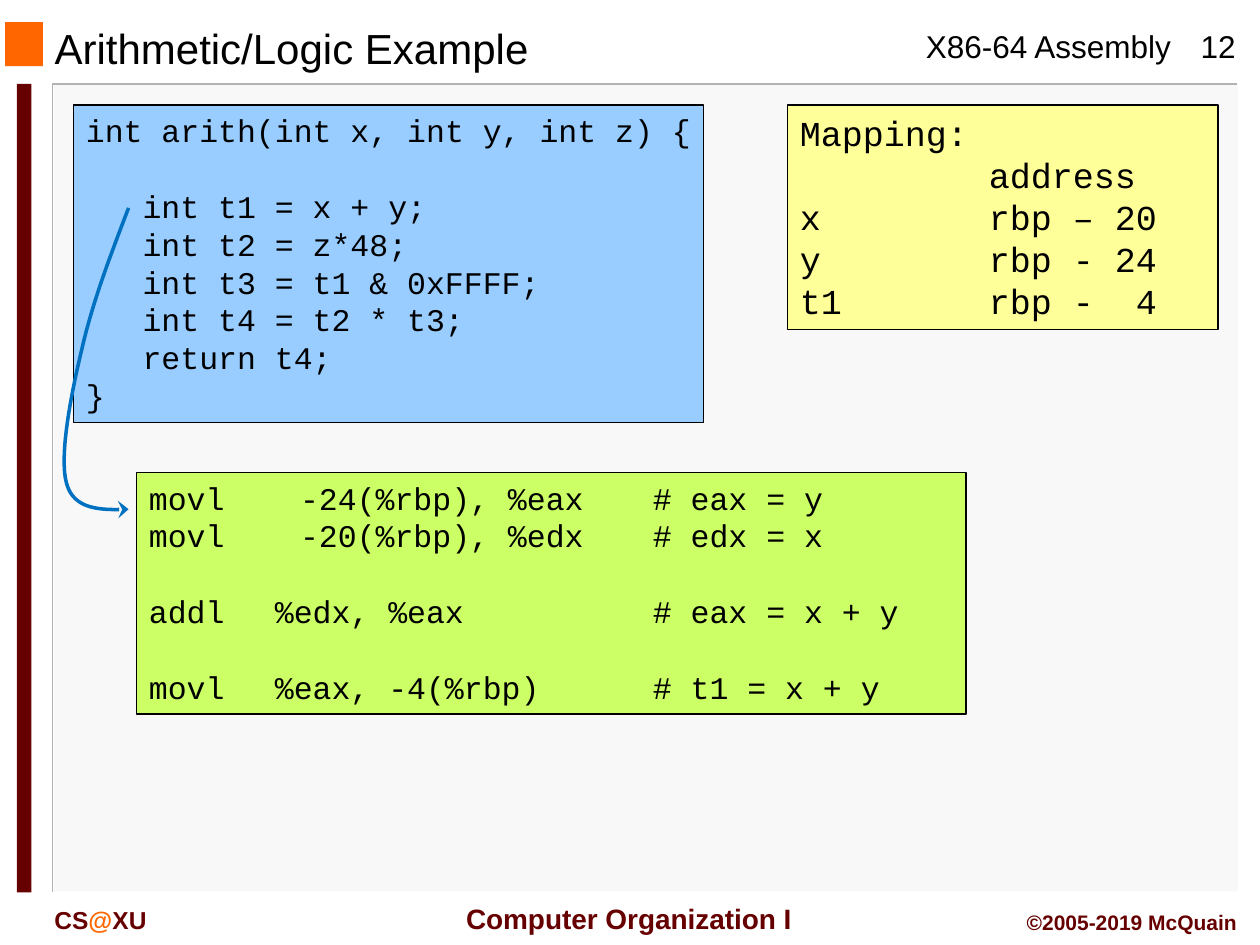
from pptx import Presentation, util as u
from pptx.dml.color import RGBColor
from pptx.enum import shapes, text
from lxml import etree

deck = Presentation()
deck.slide_width, deck.slide_height = u.Inches(10), u.Inches(7.5)
cell = deck.slide_width / 120  # grid of 120 columns by 90 rows
slide = deck.slides.add_slide(deck.slide_layouts[5])
parts = slide.shapes
NS = "{http://schemas.openxmlformats.org/drawingml/2006/main}"
RECT = shapes.MSO_SHAPE.RECTANGLE
LEFT, MID, RIGHT = text.PP_ALIGN.LEFT, text.PP_ALIGN.CENTER, text.PP_ALIGN.RIGHT
TOP, CENTRE = text.MSO_ANCHOR.TOP, text.MSO_ANCHOR.MIDDLE
MAROON, ORANGE = "660000", "FF6600"
rgb = RGBColor.from_string


def grid(*nums):
    return [round(n * cell) for n in nums]


def write(frame, lines, size=18, font="Arial", color="000000", bold=False,
          align=LEFT, anchor=TOP, wrap=True):
    """Each line is (runs, indent in columns, tab columns, space before in points)."""
    frame.word_wrap, frame.vertical_anchor = wrap, anchor
    frame.margin_left = frame.margin_right = u.Inches(0.1)
    frame.margin_top = frame.margin_bottom = u.Inches(0.05)
    for i, (runs, indent, tabs, gap) in enumerate(lines):
        para = frame.add_paragraph() if i else frame.paragraphs[0]
        para.alignment, para.space_before = align, u.Pt(gap)
        props = para._p.get_or_add_pPr()
        if indent:
            props.set("marL", str(grid(indent)[0]))
        if tabs:
            # A first-line indent would reset these stops, so none is set
            stops = etree.SubElement(props, NS + "tabLst")
            for stop in grid(*tabs):
                etree.SubElement(stops, NS + "tab", pos=str(stop), algn="l")
        for words, tint in ([(runs, color)] if isinstance(runs, str) else runs):
            run = para.add_run()
            run.text = words
            run.font.size, run.font.name, run.font.bold = u.Pt(size), font, bold
            run.font.color.rgb = rgb(tint)


# Panel, title marker and side bar
for box, fill in [((5.1, 8, 112.8, 76.9), "F8F8F8"),
                  ((0.5, 2.1, 3.6, 4.2), ORANGE),
                  ((1.6, 8, 1.4, 77), MAROON)]:
    block = parts.add_shape(RECT, *grid(*box))
    block.shadow.inherit = False
    block.fill.solid()
    block.fill.fore_color.rgb = rgb(fill)
    block.line.fill.background()

# Open outlines: panel edges, then the sampled curve of the arrow
curve = [(12.25, 19.8)]
for bend in [[(10.55, 24.25), (8.85, 28.7), (7.85, 33.05)],
             [(6.8, 37.4), (5.6, 43.45), (6.35, 46.05)],
             [(7.05, 48.6), (9.7, 48.6), (12.25, 48.5)]]:
    a, (b, c, d) = curve[-1], bend
    for t in [n / 16 for n in range(1, 17)]:
        s = 1 - t
        curve.append(tuple(s**3 * a[k] + 3 * s * s * t * b[k] + 3 * s * t * t * c[k]
                           + t**3 * d[k] for k in (0, 1)))

edges = [([(117.8, 8), (5, 8), (5, 85)], "B2B2B2", 1),
         ([(118, 8), (118, 85), (5.3, 85)], "FFFFFF", 1),
         (curve, "0070C0", 2)]
for points, color, width in edges:
    pen = parts.build_freeform(*grid(*points[0]), scale=1.0)
    pen.add_line_segments([grid(*p) for p in points[1:]], close=False)
    edge = pen.convert_to_shape()
    edge.shadow.inherit = False
    edge.fill.background()
    edge.line.color.rgb = rgb(color)
    edge.line.width = u.Pt(width)
arrow = edge
etree.SubElement(arrow.line._get_or_add_ln(), NS + "tailEnd", type="stealth",
                 w="lg", len="med")

# Title
title = parts.title
title.left, title.top, title.width, title.height = grid(4, 2.3, 76, 4.5)
write(title.text_frame, [("Arithmetic/Logic Example", 0, (), 0)], size=24, anchor=CENTRE)

# Header and footer
dark = dict(color=MAROON, bold=True)
for box, words, form in [
        ((87, 2, 26, 4.8), "X86-64 Assembly", dict(wrap=False)),
        ((112, 2, 8, 4.8), "12", dict(align=MID)),
        ((42.4, 85.3, 35, 4.4), "Computer Organization I",
         dict(dark, size=16, align=MID, anchor=CENTRE, wrap=False)),
        ((4, 85.6, 18, 4), [("CS", MAROON), ("@", ORANGE), ("XU", MAROON)],
         dict(dark, size=14)),
        ((94, 86, 25, 3.6), "©2005-2019 McQuain", dict(dark, size=12, align=RIGHT))]:
    label = parts.add_textbox(*grid(*box))
    write(label.text_frame, [(words, 0, (), 0)], **form)

# Code boxes; a gap of one text line parts the groups of statements
GAP = 21.7
body = ["int t1 = x + y;", "int t2 = z*48;", "int t3 = t1 & 0xFFFF;",
        "int t4 = t2 * t3;", "return t4;"]
source = [("int arith(int x, int y, int z) {", 0, (), 0)]
source += [(row, 5.4, (), 0 if i else GAP) for i, row in enumerate(body)]
source += [("}", 0, (), 0)]

places = [("Mapping:", 0, (), 0), ("address", 18, (), 0)]
places += [(row, 0, (18, 32), 0)
           for row in ("x\trbp – 20", "y\trbp - 24", "t1\trbp -\t4")]

steps = [("movl\t-24(%rbp), %eax\t# eax = y", 0, (14.4, 48), 0),
         ("movl\t-20(%rbp), %edx\t# edx = x", 0, (14.4, 48), 0),
         ("addl\t%edx, %eax\t# eax = x + y", 0, (12, 48), GAP),
         ("movl\t%eax, -4(%rbp)\t# t1 = x + y", 0, (12, 48), GAP)]

for box, fill, lines, size in [((7, 10, 60, 30.25), "99CCFF", source, 18),
                               ((75, 10, 41, 21.4), "FFFF99", places, 20),
                               ((13, 45, 79, 23), "CCFF66", steps, 18)]:
    code = parts.add_shape(RECT, *grid(*box))
    code.shadow.inherit = False
    code.fill.solid()
    code.fill.fore_color.rgb = rgb(fill)
    code.line.color.rgb = rgb("000000")
    code.line.width = u.Pt(0.75)
    write(code.text_frame, lines, size=size, font="Courier New")

# Arrow on top of the code boxes
code._element.addnext(arrow._element)

deck.save("out.pptx")
